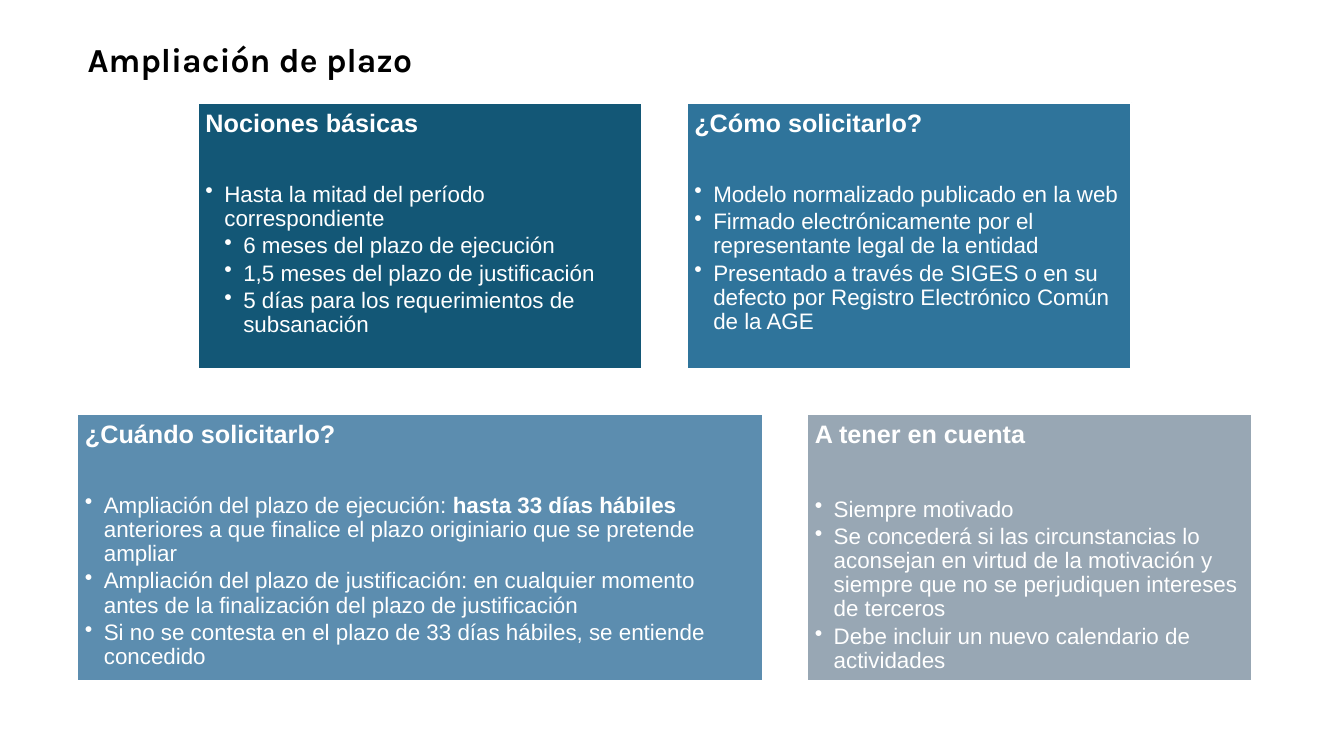
"""Build the slide on deadline extensions, with four coloured panels in two centred rows."""
from dataclasses import dataclass

from lxml.etree import SubElement
from pptx import Presentation
from pptx.dml.color import RGBColor
from pptx.enum.shapes import MSO_SHAPE
from pptx.enum.text import MSO_ANCHOR, MSO_AUTO_SIZE, PP_ALIGN
from pptx.oxml.ns import qn
from pptx.util import Pt

COLORS = {
    "navy": "135776",
    "blue": "2F749B",
    "sky": "5C8DAF",
    "gray": "98A7B4",
    "white": "FFFFFF",
    "black": "000000",
}
CENTER = 474.7
TOP = 73.5
GAP = 31.7
PANEL_HEIGHT = 190.5
NARROW, WIDE = 317.5, 489.6
INSET = 5.4
INDENT = 13.5
BODY_SIZE = 16


@dataclass
class Span:
    text: str
    bold: bool = False


@dataclass
class Bullet:
    spans: list[Span]
    level: int = 1


@dataclass
class Panel:
    heading: str
    color: str
    bullets: list[Bullet]
    width: float = NARROW
    heading_gap: float = 32.2


def plain(text: str, level: int = 1) -> Bullet:
    return Bullet([Span(text)], level)


ROWS = [
    [
        Panel("Nociones básicas", "navy", [
            plain("Hasta la mitad del período correspondiente"),
            plain("6 meses del plazo de ejecución", 2),
            plain("1,5 meses del plazo de justificación", 2),
            plain("5 días para los requerimientos de subsanación", 2),
        ]),
        Panel("¿Cómo solicitarlo?", "blue", [
            plain("Modelo normalizado publicado en la web"),
            plain("Firmado electrónicamente por el representante legal de la entidad"),
            plain("Presentado a través de SIGES o en su defecto por "
                  "Registro Electrónico Común de la AGE"),
        ]),
    ],
    [
        Panel("¿Cuándo solicitarlo?", "sky", [
            Bullet([
                Span("Ampliación del plazo de ejecución: "),
                Span("hasta 33 días hábiles ", bold=True),
                Span("anteriores a que finalice el plazo originiario que se pretende ampliar"),
            ]),
            plain("Ampliación del plazo de justificación: en cualquier momento "
                  "antes de la finalización del plazo de justificación"),
            plain("Si no se contesta en el plazo de 33 días hábiles, se entiende concedido"),
        ], width=WIDE),
        Panel("A tener en cuenta", "gray", [
            plain("Siempre motivado"),
            plain("Se concederá si las circunstancias lo aconsejan en virtud de la "
                  "motivación y siempre que no se perjudiquen intereses de terceros"),
            plain("Debe incluir un nuevo calendario de actividades"),
        ], heading_gap=35),
    ],
]


def rgb(name: str) -> RGBColor:
    return RGBColor.from_string(COLORS[name])


def add_span(para, span: Span, size: float, font: str = "Arial", color: str = "white") -> None:
    run = para.add_run()
    run.text = span.text
    run.font.name = font
    run.font.size = Pt(size)
    run.font.bold = span.bold
    run.font.color.rgb = rgb(color)


def add_bullet(frame, bullet: Bullet) -> None:
    para = frame.add_paragraph()
    para.alignment = PP_ALIGN.LEFT
    para.level = bullet.level
    para.line_spacing = 0.9
    para.space_after = Pt(2.3)
    properties = para._p.get_or_add_pPr()
    properties.set("marL", str(Pt(INDENT * bullet.level)))
    properties.set("indent", str(-Pt(INDENT)))
    SubElement(properties, qn("a:buChar")).set("char", "•")
    for span in bullet.spans:
        add_span(para, span, BODY_SIZE)
    SubElement(para._p, qn("a:endParaRPr")).set("sz", str(BODY_SIZE * 100))


def add_panel(page, panel: Panel, left: float, top: float) -> None:
    box = page.shapes.add_shape(
        MSO_SHAPE.RECTANGLE, Pt(left), Pt(top), Pt(panel.width), Pt(PANEL_HEIGHT))
    box.shadow.inherit = False
    box.fill.solid()
    box.fill.fore_color.rgb = rgb(panel.color)
    box.line.color.rgb = rgb("white")
    box.line.width = Pt(1.5)
    frame = box.text_frame
    frame.word_wrap = True
    frame.vertical_anchor = MSO_ANCHOR.TOP
    frame.margin_left = frame.margin_right = Pt(INSET)
    frame.margin_top = frame.margin_bottom = Pt(INSET)
    para = frame.paragraphs[0]
    para.alignment = PP_ALIGN.LEFT
    para.line_spacing = 0.9
    para.space_after = Pt(panel.heading_gap)
    add_span(para, Span(panel.heading, bold=True), 18)
    for bullet in panel.bullets:
        add_bullet(frame, bullet)


def add_title(page, text: str) -> None:
    box = page.shapes.add_textbox(Pt(55.5), Pt(24.5), Pt(411), Pt(36))
    frame = box.text_frame
    frame.word_wrap = True
    frame.auto_size = MSO_AUTO_SIZE.SHAPE_TO_FIT_TEXT
    add_span(frame.paragraphs[0], Span(text, bold=True), 24, "Karla", "black")


def main() -> None:
    deck = Presentation()
    deck.slide_width, deck.slide_height = Pt(960), Pt(540)
    page = deck.slides.add_slide(deck.slide_layouts[6])
    for index, row in enumerate(ROWS):
        total = sum(panel.width for panel in row) + GAP * (len(row) - 1)
        left = CENTER - total / 2
        for panel in row:
            add_panel(page, panel, left, TOP + index * (PANEL_HEIGHT + GAP))
            left += panel.width + GAP
    add_title(page, "Ampliación de plazo")
    deck.save("out.pptx")


if __name__ == "__main__":
    main()
